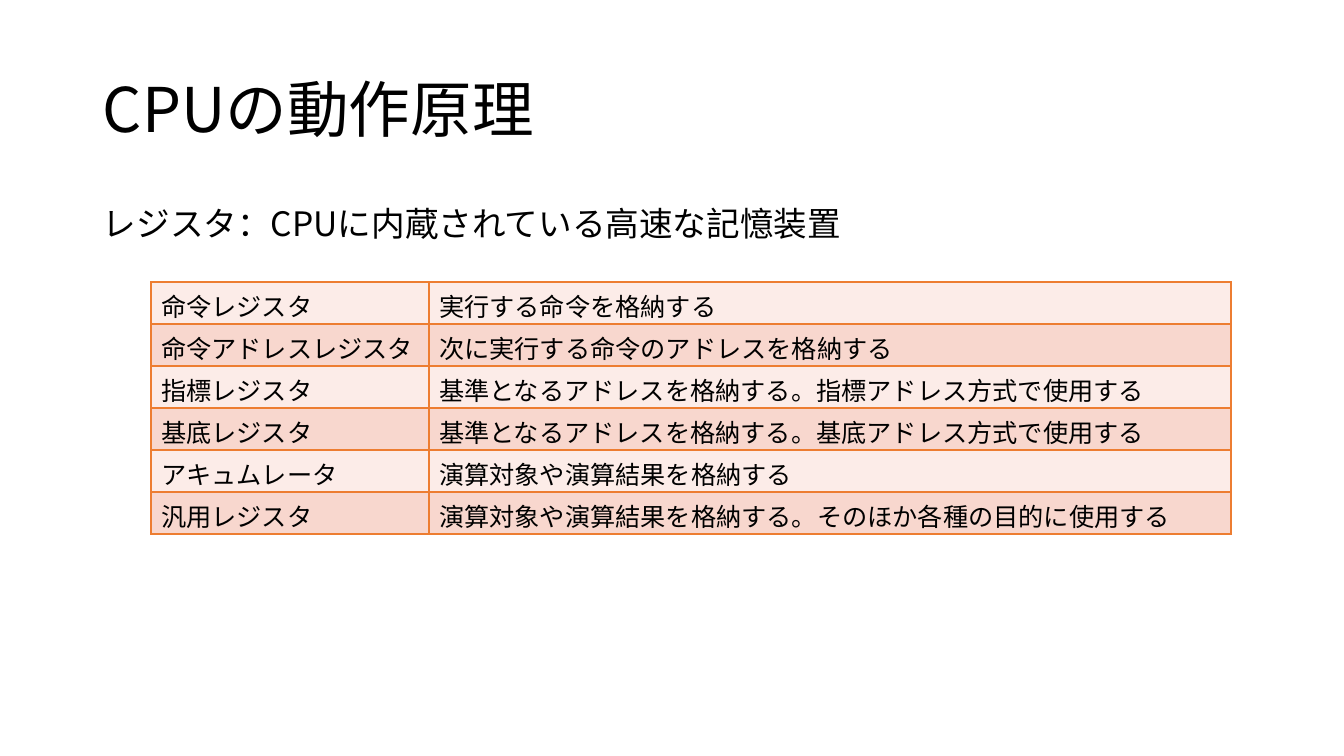
from lxml.etree import SubElement
from pptx import Presentation
from pptx.dml.color import RGBColor
from pptx.enum.text import MSO_ANCHOR as Anchor
from pptx.oxml.ns import qn
from pptx.util import Emu, Pt

FONT = "Noto Sans CJK JP"
BLACK = RGBColor(0x00, 0x00, 0x00)
ORANGE = RGBColor(0xED, 0x7D, 0x31)
LIGHT = RGBColor(0xFC, 0xEC, 0xE8)
DARK = RGBColor(0xF8, 0xD7, 0xCE)


def px(length):
    return Emu(round(length * 914400 / 100.8))


def write(paragraph, text, size):
    run = paragraph.add_run()
    run.text = text
    run.font.color.rgb = BLACK
    for name, value in {"name": FONT, "size": Pt(size)}.items():
        setattr(run.font, name, value)
    SubElement(run.font._element, qn("a:ea"), typeface=FONT)


presentation = Presentation()
presentation.slide_width = px(1344)
presentation.slide_height = px(756)
slide = presentation.slides.add_slide(presentation.slide_layouts[6])

headings = [
    ("CPUの動作原理", 40, 146, 44, Anchor.MIDDLE, 0),
    ("レジスタ：CPUに内蔵されている高速な記憶装置", 202, 480, 24, Anchor.TOP, 10),
]
for text, top, height, size, anchor, space in headings:
    box = slide.shapes.add_textbox(px(93), px(top), px(1159), px(height))
    frame = box.text_frame
    for name, value in {"word_wrap": True, "vertical_anchor": anchor}.items():
        setattr(frame, name, value)
    paragraph = frame.paragraphs[0]
    for name, value in {"line_spacing": 0.9, "space_before": Pt(space)}.items():
        setattr(paragraph, name, value)
    write(paragraph, text, size)

registers = [
    ("命令レジスタ", "実行する命令を格納する"),
    ("命令アドレスレジスタ", "次に実行する命令のアドレスを格納する"),
    ("指標レジスタ", "基準となるアドレスを格納する。指標アドレス方式で使用する"),
    ("基底レジスタ", "基準となるアドレスを格納する。基底アドレス方式で使用する"),
    ("アキュムレータ", "演算対象や演算結果を格納する"),
    ("汎用レジスタ", "演算対象や演算結果を格納する。そのほか各種の目的に使用する"),
]
widths = [278, 802]
row_height = 42
table = slide.shapes.add_table(
    len(registers), len(widths), px(151), px(282),
    px(sum(widths)), px(row_height * len(registers)),
).table
for name in ("first_row", "horz_banding"):
    setattr(table, name, False)
for column, width in zip(table.columns, widths):
    column.width = px(width)

for row_index, register in enumerate(registers):
    table.rows[row_index].height = px(row_height)
    for column_index, text in enumerate(register):
        cell = table.cell(row_index, column_index)
        write(cell.text_frame.paragraphs[0], text, 18)
        properties = cell._tc.get_or_add_tcPr()
        for side in ("a:lnL", "a:lnR", "a:lnT", "a:lnB"):
            border = SubElement(properties, qn(side), w=str(Pt(1)))
            fill = SubElement(border, qn("a:solidFill"))
            SubElement(fill, qn("a:srgbClr"), val=str(ORANGE))
        cell.fill.solid()
        cell.fill.fore_color.rgb = DARK if row_index % 2 else LIGHT

presentation.save("out.pptx")
